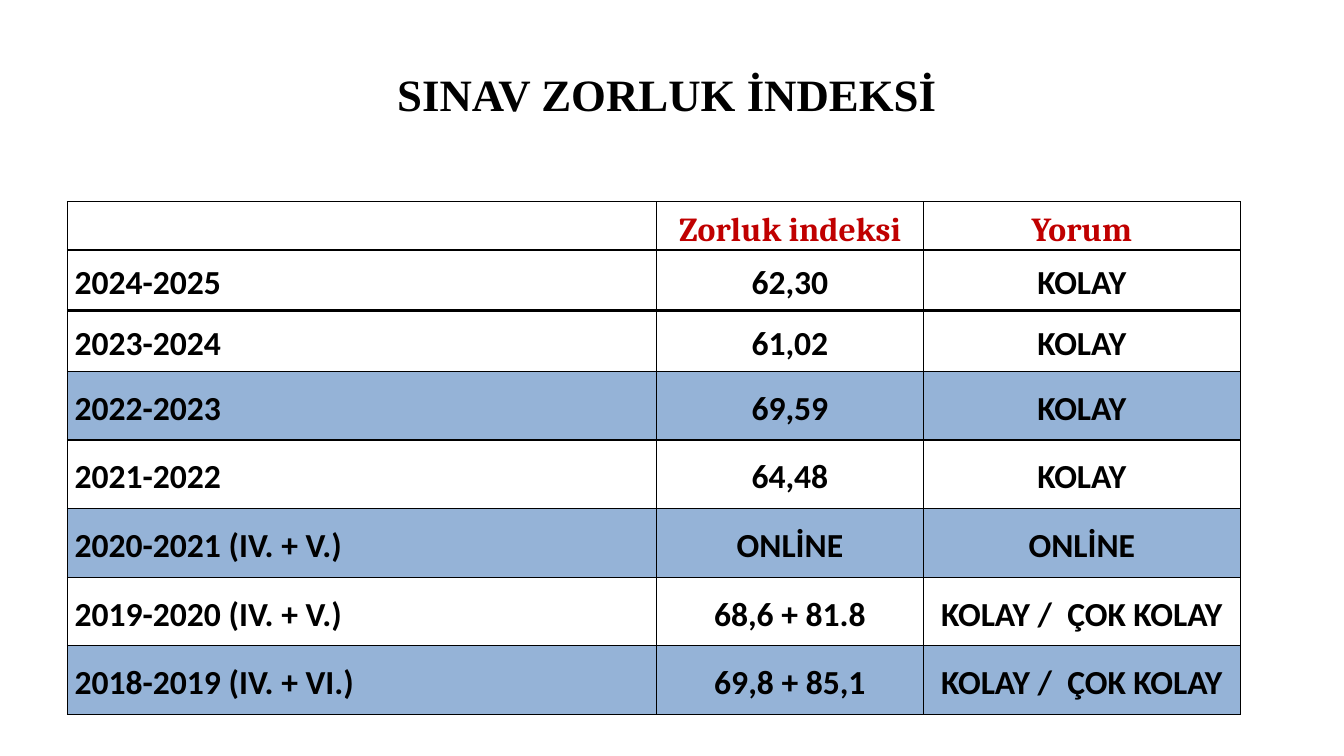
import dataclasses

import pptx
import pptx.dml.color
import pptx.enum.text
import pptx.oxml
import pptx.oxml.ns
import pptx.util

Inches = pptx.util.Inches
Pt = pptx.util.Pt
RGB = pptx.dml.color.RGBColor.from_string
ALIGN = pptx.enum.text.PP_ALIGN
ANCHOR = pptx.enum.text.MSO_ANCHOR


@dataclasses.dataclass(frozen=True)
class Theme:
    ink: str = "000000"
    heading: str = "C00000"
    band: str = "95B3D7"
    title_font: str = "Times New Roman"
    heading_font: str = "Cambria"
    body_font: str = "Calibri"
    title_size: int = 32
    table_size: int = 24
    thin: float = 1
    thick: float = 2.25


THEME = Theme()

HEADINGS = ("", "Zorluk indeksi", "Yorum")
EXAM_YEARS = (
    ("2024-2025", "62,30", "KOLAY"),
    ("2023-2024", "61,02", "KOLAY"),
    ("2022-2023", "69,59", "KOLAY"),
    ("2021-2022", "64,48", "KOLAY"),
    ("2020-2021 (IV. + V.)", "ONLİNE", "ONLİNE"),
    ("2019-2020 (IV. + V.)", "68,6 + 81.8", "KOLAY /  ÇOK KOLAY"),
    ("2018-2019 (IV. + VI.)", "69,8 + 85,1", "KOLAY /  ÇOK KOLAY"),
)
BANDED_ROWS = (3, 5, 7)
THICK_RULES = (1, 2)  # rules counted from the top edge of the table
COLUMN_WIDTHS = (5.84, 2.65, 3.14)
ROW_HEIGHTS = (0.48, 0.6, 0.6) + (0.68,) * 5


def style_paragraph(paragraph, font, size, color, align):
    paragraph.alignment = align
    paragraph.font.name = font
    paragraph.font.size = Pt(size)
    paragraph.font.bold = True
    paragraph.font.color.rgb = RGB(color)


def set_borders(cell, top, bottom):
    """Draw the four cell edges; left and right are always thin."""
    edges = (("lnL", THEME.thin), ("lnR", THEME.thin), ("lnT", top), ("lnB", bottom))
    for position, (tag, width) in enumerate(edges):
        line = pptx.oxml.parse_xml(
            f'<a:{tag} {pptx.oxml.ns.nsdecls("a")} w="{Pt(width)}">'
            f'<a:solidFill><a:srgbClr val="{THEME.ink}"/></a:solidFill></a:{tag}>'
        )
        cell._tc.get_or_add_tcPr().insert(position, line)


def add_title(slide, left, top, width, height):
    title = slide.shapes.add_textbox(
        Inches(left), Inches(top), Inches(width), Inches(height)
    ).text_frame
    title.word_wrap = True
    title.vertical_anchor = ANCHOR.MIDDLE
    title.text = "SINAV ZORLUK İNDEKSİ "
    style_paragraph(title.paragraphs[0], THEME.title_font, THEME.title_size,
                    THEME.ink, ALIGN.CENTER)


def fill_cell(cell, text, row, column):
    is_heading = row == 0
    cell.text = text
    cell.vertical_anchor = ANCHOR.BOTTOM if is_heading else ANCHOR.MIDDLE
    cell.margin_left = cell.margin_right = Inches(0.07)
    cell.margin_top = cell.margin_bottom = 0
    paragraph = cell.text_frame.paragraphs[0]
    paragraph.line_spacing = 1.15
    style_paragraph(
        paragraph,
        THEME.heading_font if is_heading else THEME.body_font,
        THEME.table_size,
        THEME.heading if is_heading else THEME.ink,
        ALIGN.LEFT if column == 0 else ALIGN.CENTER,
    )
    if row in BANDED_ROWS:
        cell.fill.solid()
        cell.fill.fore_color.rgb = RGB(THEME.band)
    else:
        cell.fill.background()
    top, bottom = (THEME.thick if rule in THICK_RULES else THEME.thin
                   for rule in (row, row + 1))
    set_borders(cell, top, bottom)


def add_difficulty_table(slide, left, top, width, height):
    rows = (HEADINGS,) + EXAM_YEARS
    table = slide.shapes.add_table(
        len(rows), len(HEADINGS),
        Inches(left), Inches(top), Inches(width), Inches(height),
    ).table
    table.first_row = table.horz_banding = False
    for column, share in zip(table.columns, COLUMN_WIDTHS):
        column.width = Inches(width * share / sum(COLUMN_WIDTHS))
    for row, share in zip(table.rows, ROW_HEIGHTS):
        row.height = Inches(height * share / sum(ROW_HEIGHTS))
    for row, texts in enumerate(rows):
        for column, text in enumerate(texts):
            fill_cell(table.cell(row, column), text, row, column)


def main():
    deck = pptx.Presentation()
    deck.slide_width, deck.slide_height = Inches(13.33), Inches(7.5)
    slide = deck.slides.add_slide(deck.slide_layouts[6])
    add_title(slide, 0.67, 0.3, 12, 1.25)
    add_difficulty_table(slide, 0.67, 2, 11.63, 5.09)
    deck.save("out.pptx")


if __name__ == "__main__":
    main()
